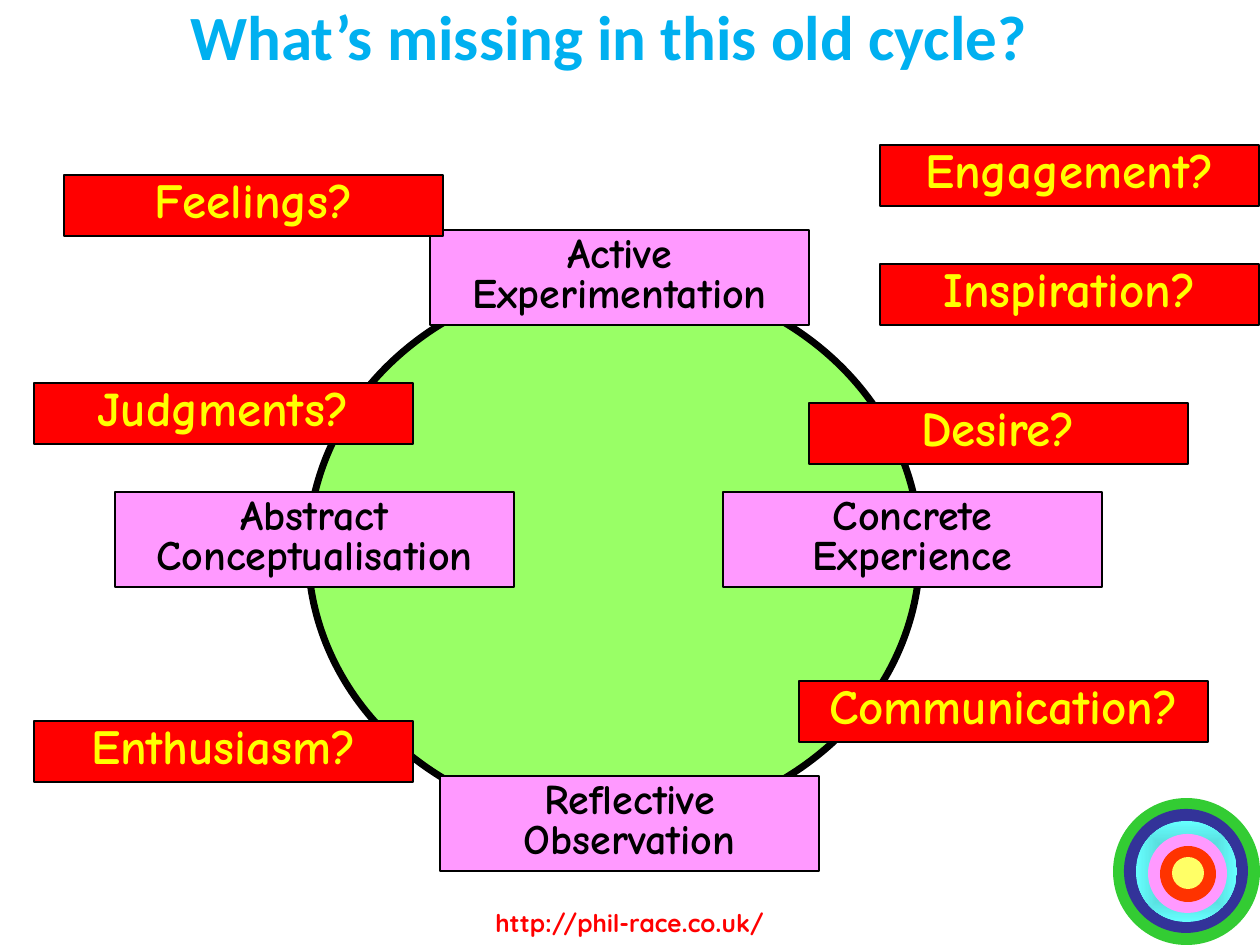
import pptx
import pptx.dml.color
import pptx.enum.shapes
import pptx.enum.text
import pptx.oxml
import pptx.oxml.ns
import pptx.util

SHAPE = pptx.enum.shapes.MSO_SHAPE
ALIGN = pptx.enum.text.PP_ALIGN
ANCHOR = pptx.enum.text.MSO_ANCHOR
EMU_PER_PX = 914400 / 126

prs = pptx.Presentation()
prs.slide_width = round(1260 * EMU_PER_PX)
prs.slide_height = round(945 * EMU_PER_PX)
s = prs.slides.add_slide(prs.slide_layouts[6])


def add_box(kind, box, fill=None, line=None):
    """Add a shape, or a text box if kind is None, at box (x, y, w, h) in px."""
    at = [round(v * EMU_PER_PX) for v in box]
    if kind is None:
        return s.shapes.add_textbox(*at)
    sp = s.shapes.add_shape(kind, *at)
    sp.shadow.inherit = False
    sp.fill.solid()
    sp.fill.fore_color.rgb = pptx.dml.color.RGBColor.from_string(fill)
    if line:
        sp.line.color.rgb = pptx.dml.color.RGBColor.from_string("000000")
        sp.line.width = pptx.util.Pt(line)
    else:
        sp.line.fill.background()
    return sp


def set_text(sp, lines, font, size, color, align, spacing=None, anchor=ANCHOR.TOP):
    tf = sp.text_frame
    tf.word_wrap = True
    tf.vertical_anchor = anchor
    tf.text = "\n".join(lines)
    for p in tf.paragraphs:
        p.alignment = align
        p.line_spacing = spacing
        p.font.name = font
        p.font.size = pptx.util.Pt(size)
        p.font.bold = True
        p.font.color.rgb = pptx.dml.color.RGBColor.from_string(color)


# Concentric rings in the corner, outermost first
rings = [
    (1113, 798, 147, "33CC33"),
    (1124, 809, 124, "333399"),
    (1136, 821, 101, "66FFFF"),
    (1148, 834, 79, "FF99FF"),
    (1160, 846, 56, "FF3300"),
    (1172, 857, 32, "FFFF66"),
]
for x, y, size, color in rings:
    sp = add_box(SHAPE.OVAL, (x, y, size, size), color)
    if color == "66FFFF":
        sp.fill.gradient()
        for stop, (position, shade) in zip(sp.fill.gradient_stops, [(0, "47B2B2"), (1, color)]):
            stop.position = position
            stop.color.rgb = pptx.dml.color.RGBColor.from_string(shade)
        lin = sp.element.spPr.find(".//" + pptx.oxml.ns.qn("a:lin"))
        radial = pptx.oxml.parse_xml(
            f'<a:path {pptx.oxml.ns.nsdecls("a")} path="shape">'
            '<a:fillToRect l="50000" t="50000" r="50000" b="50000"/></a:path>')
        lin.getparent().replace(lin, radial)

url = add_box(None, (483, 902, 364, 43))
set_text(url, ["http://phil-race.co.uk/"], "Quicksand", 14, "FF0000", ALIGN.LEFT)

title = add_box(None, (74, -34, 1070, 150))
set_text(title, ["What’s missing in this old cycle?"], "Calibri", 36, "00B0F0",
         ALIGN.CENTER, 0.85, ANCHOR.MIDDLE)

add_box(SHAPE.OVAL, (308, 276, 612, 549), "99FF66", 4)

stages = [
    (430, 230, 379, ["Active", "Experimentation"]),
    (723, 492, 379, ["Concrete", "Experience"]),
    (440, 776, 379, ["Reflective", "Observation"]),
    (115, 492, 399, ["Abstract", "Conceptualisation"]),
]
for x, y, w, lines in stages:
    sp = add_box(SHAPE.RECTANGLE, (x, y, w, 95), "FF99FF", 1)
    set_text(sp, lines, "Comic Neue", 24, "000000", ALIGN.CENTER, 0.8)

missing = [
    (64, 175, 379, "Feelings?"),
    (880, 264, 379, "Inspiration?"),
    (34, 721, 379, "Enthusiasm?"),
    (799, 681, 409, "Communication?"),
    (34, 383, 379, "Judgments?"),
    (809, 403, 379, "Desire?"),
    (880, 145, 379, "Engagement?"),
]
for x, y, w, word in missing:
    sp = add_box(SHAPE.RECTANGLE, (x, y, w, 61), "FF0000", 1)
    set_text(sp, [word], "Comic Neue", 28, "FFFF00", ALIGN.CENTER, 0.8)

prs.save("out.pptx")
